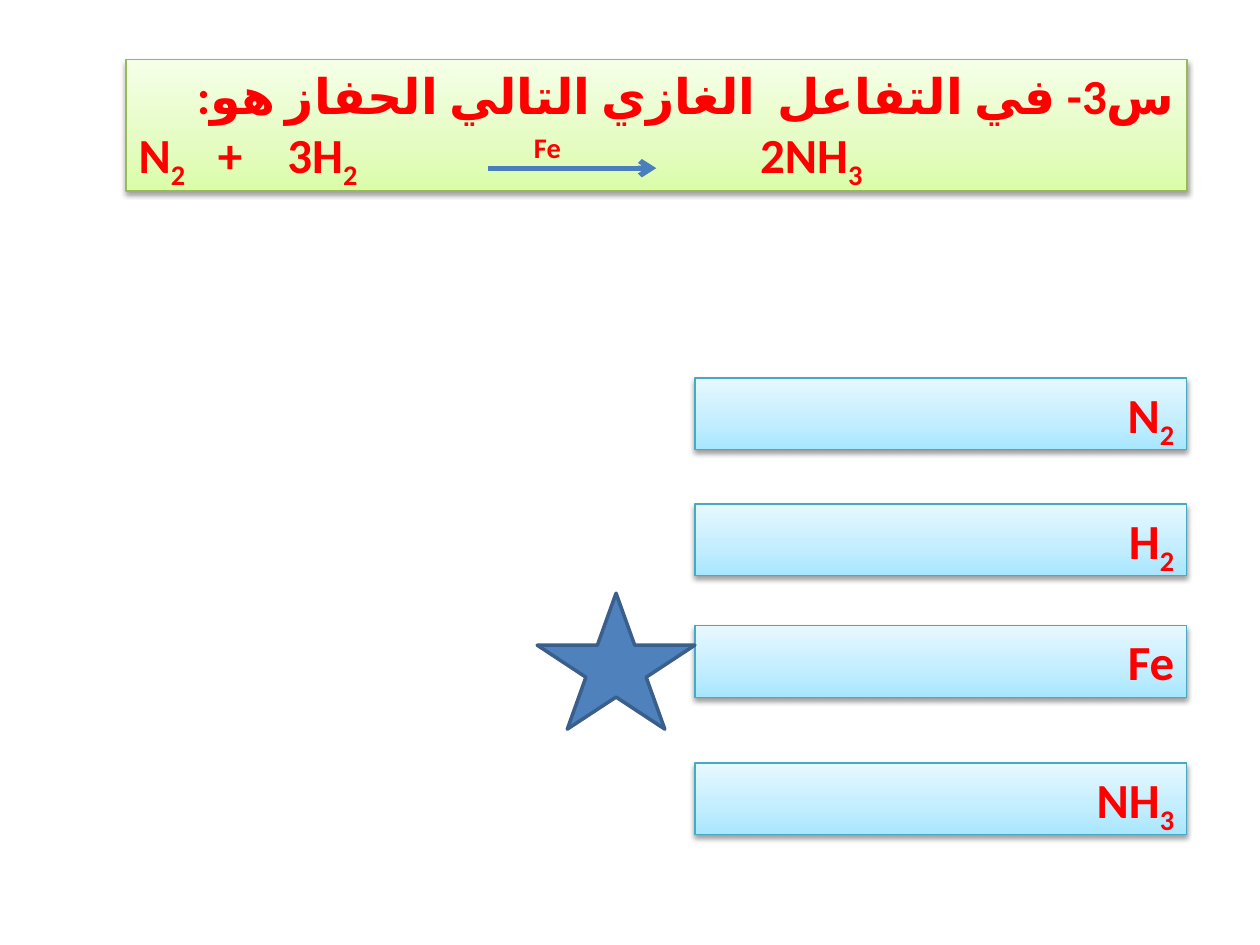
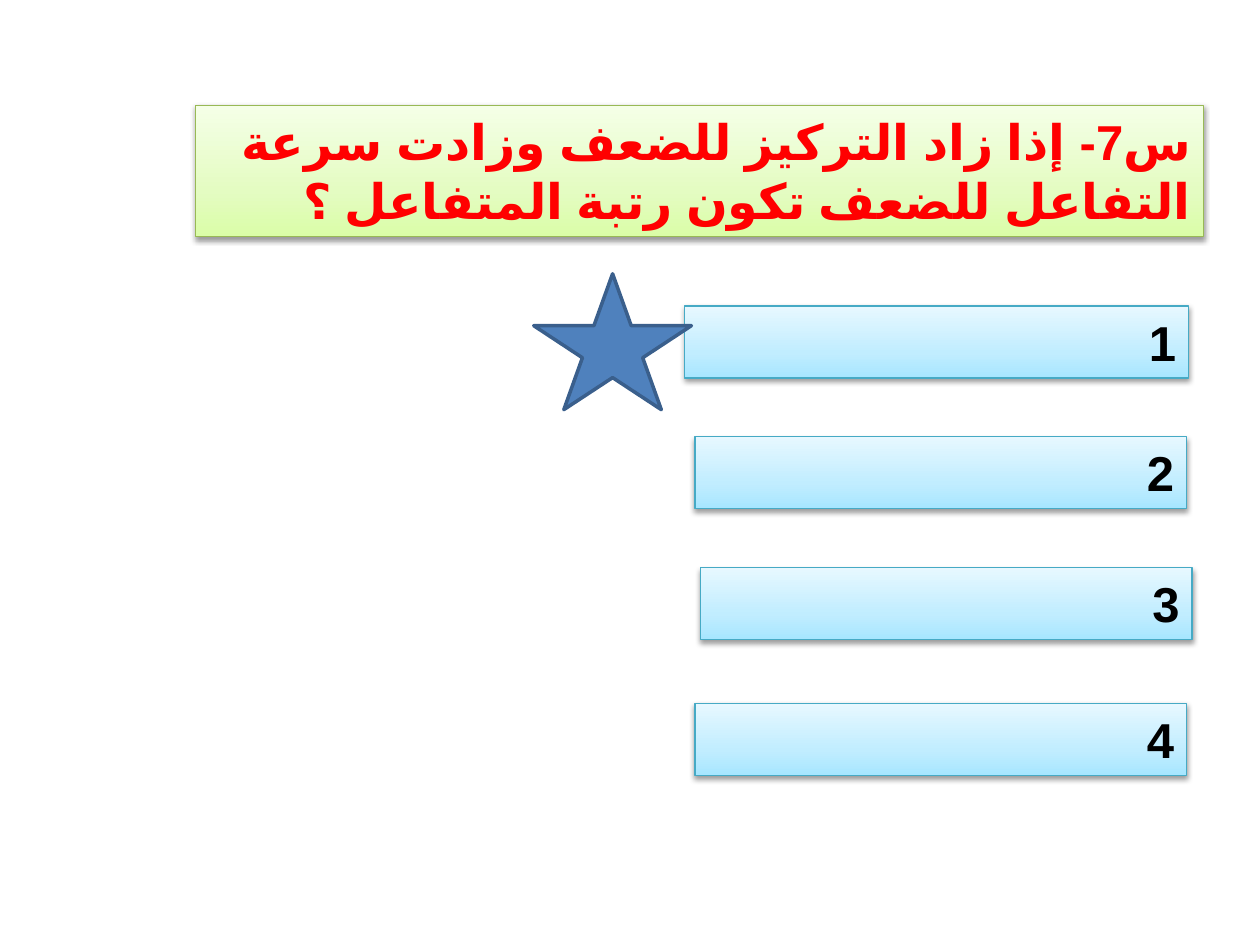
"""Build two multiple-choice chemistry question slides."""
import copy

import pptx
import pptx.dml.color
import pptx.enum.shapes
import pptx.enum.text
import pptx.oxml
import pptx.oxml.ns
import pptx.util
from pptx.util import Cm

RED, BLACK = "FF0000", "000000"
GREEN_STOPS = [(0, "DAFDA7"), (0.35, "E4FCC2"), (1, "F5FFE7")]
BLUE_STOPS = [(0, "A7E6FF"), (0.35, "C1EDFF"), (1, "E7F8FF")]
GREEN_LINE, BLUE_LINE = "98B955", "46AAC5"
STAR_FILL, STAR_LINE, ARROW = "4F81BD", "3A5F8C", "4B7EBC"
FONT, SIZE = "Calibri", 28
SUB, SUPER = -25, 30
OPTION_X, OPTION_W, OPTION_H = 14.01, 9.91, 1.45
NS = pptx.oxml.ns.nsdecls("a")
SHADOW = (f'<a:outerShdw {NS} blurRad="40000" dist="20000" dir="5400000" rotWithShape="0">'
          '<a:srgbClr val="000000"><a:alpha val="38000"/></a:srgbClr></a:outerShdw>')


def rgb(value):
    """Turn a hex string into a colour."""
    return pptx.dml.color.RGBColor.from_string(value)


def child(parent, tag, **attrs):
    """Append an XML element with the given attributes."""
    el = parent.makeelement(pptx.oxml.ns.qn(tag), attrs)
    parent.append(el)
    return el


def add_run(p, text, color=RED, base=0, cs=FONT):
    """Add one bold run with an optional baseline shift."""
    r = p.add_run()
    r.text = text
    r.font.name, r.font.size, r.font.bold = FONT, pptx.util.Pt(SIZE), True
    r.font.color.rgb = rgb(color)
    rPr = r._r.get_or_add_rPr()
    rPr.set("lang", "ar-SA")
    child(rPr, "a:cs", typeface=cs)
    if base:
        rPr.set("baseline", str(base * 1000))


def write(p, runs, rtl=True, **fmt):
    """Fill a paragraph with (text, baseline) runs."""
    align = pptx.enum.text.PP_ALIGN
    p.alignment = align.RIGHT if rtl else align.LEFT
    p._p.get_or_add_pPr().set("rtl", "1" if rtl else "0")
    for text, base in runs:
        add_run(p, text, base=base, **fmt)


def style_panel(sp, stops, line):
    """Give a panel its gradient, outline, shadow and text frame settings."""
    sp.fill.gradient()
    sp.fill.gradient_angle = 90
    gs_list = sp._element.spPr.find(".//" + pptx.oxml.ns.qn("a:gsLst"))
    gs_list.append(copy.deepcopy(gs_list[0]))
    for stop, (pos, color) in zip(sp.fill.gradient_stops, stops):
        stop.position, stop.color.rgb = pos, rgb(color)
    sp.line.color.rgb, sp.line.width = rgb(line), pptx.util.Pt(0.75)
    sp.shadow.inherit = False
    effects = sp._element.spPr.find(pptx.oxml.ns.qn("a:effectLst"))
    effects.append(pptx.oxml.parse_xml(SHADOW))
    tf = sp.text_frame
    tf.word_wrap = True
    tf.auto_size = pptx.enum.text.MSO_AUTO_SIZE.SHAPE_TO_FIT_TEXT
    tf.vertical_anchor = pptx.enum.text.MSO_ANCHOR.TOP


def add_question(prs, text, x, y, w, **fmt):
    """Add a title-only slide with its question panel."""
    s = prs.slides.add_slide(prs.slide_layouts[5])
    sp = s.shapes.title
    sp.left, sp.top, sp.width, sp.height = Cm(x), Cm(y), Cm(w), Cm(2.65)
    style_panel(sp, GREEN_STOPS, GREEN_LINE)
    write(sp.text_frame.paragraphs[0], [(text, 0)], **fmt)
    return s


def add_equation(s, runs, tabs):
    """Add the reaction below the question, aligned on tab stops."""
    p = s.shapes.title.text_frame.add_paragraph()
    write(p, runs, rtl=False)
    tab_list = child(p._p.get_or_add_pPr(), "a:tabLst")
    for pos in tabs:
        child(tab_list, "a:tab", pos=str(Cm(pos)), algn="l")


def add_option(s, runs, y, x=OPTION_X, w=OPTION_W, **fmt):
    """Add one answer panel."""
    sp = s.shapes.add_shape(pptx.enum.shapes.MSO_SHAPE.RECTANGLE,
                            Cm(x), Cm(y), Cm(w), Cm(OPTION_H))
    style_panel(sp, BLUE_STOPS, BLUE_LINE)
    write(sp.text_frame.paragraphs[0], runs, **fmt)


def add_star(s, x, y):
    """Mark the right answer with a star."""
    sp = s.shapes.add_shape(pptx.enum.shapes.MSO_SHAPE.STAR_5_POINT,
                            Cm(x), Cm(y), Cm(3.18), Cm(2.74))
    sp.shadow.inherit = False
    sp.fill.solid()
    sp.fill.fore_color.rgb = rgb(STAR_FILL)
    sp.line.color.rgb, sp.line.width = rgb(STAR_LINE), pptx.util.Pt(2)


def add_arrow(s, x1, x2, y):
    """Add a horizontal reaction arrow."""
    c = s.shapes.add_connector(pptx.enum.shapes.MSO_CONNECTOR.STRAIGHT,
                               Cm(x1), Cm(y), Cm(x2), Cm(y))
    c.line.color.rgb, c.line.width = rgb(ARROW), pptx.util.Pt(3)
    child(c.line._get_or_add_ln(), "a:tailEnd", type="arrow")
    child(c._element.spPr, "a:effectLst")


def build_catalyst(prs):
    """Build the question about the catalyst."""
    s = add_question(prs, "س3- في التفاعل  الغازي التالي الحفاز هو:", 2.54, 1.2, 21.39)
    add_equation(s, [("N", 0), ("2", SUB), ("\t+\t3H", 0), ("2", SUB),
                     ("\tFe", SUPER), ("\t2NH", 0), ("3", SUB)],
                 tabs=(1.6, 3, 7.97, 12.53))
    options = [[("N", 0), ("2", SUB)], [("H", 0), ("2", SUB)],
               [("Fe", 0)], [("NH", 0), ("3", SUB)]]
    for runs, y in zip(options, (7.62, 10.16, 12.61, 15.38)):
        add_option(s, runs, y)
    add_arrow(s, 9.84, 13.23, 3.39)
    add_star(s, 10.83, 11.96)


def build_order(prs):
    """Build the question about the reaction order."""
    s = add_question(prs, "س7- إذا زاد التركيز للضعف وزادت سرعة التفاعل للضعف "
                     "تكون رتبة المتفاعل ؟", 3.94, 2.12, 20.32, cs="Arial")
    places = [(13.8, 6.17, 10.16), (OPTION_X, 8.8, OPTION_W),
              (14.12, 11.44, OPTION_W), (OPTION_X, 14.18, OPTION_W)]
    for number, (x, y, w) in enumerate(places, 1):
        add_option(s, [(str(number), 0)], y, x, w, color=BLACK, cs="Arial")
    add_star(s, 10.76, 5.52)


def main():
    """Build and save the presentation."""
    prs = pptx.Presentation()
    prs.slide_width, prs.slide_height = Cm(25.4), Cm(19.05)
    build_catalyst(prs)
    build_order(prs)
    prs.save("out.pptx")


if __name__ == "__main__":
    main()
